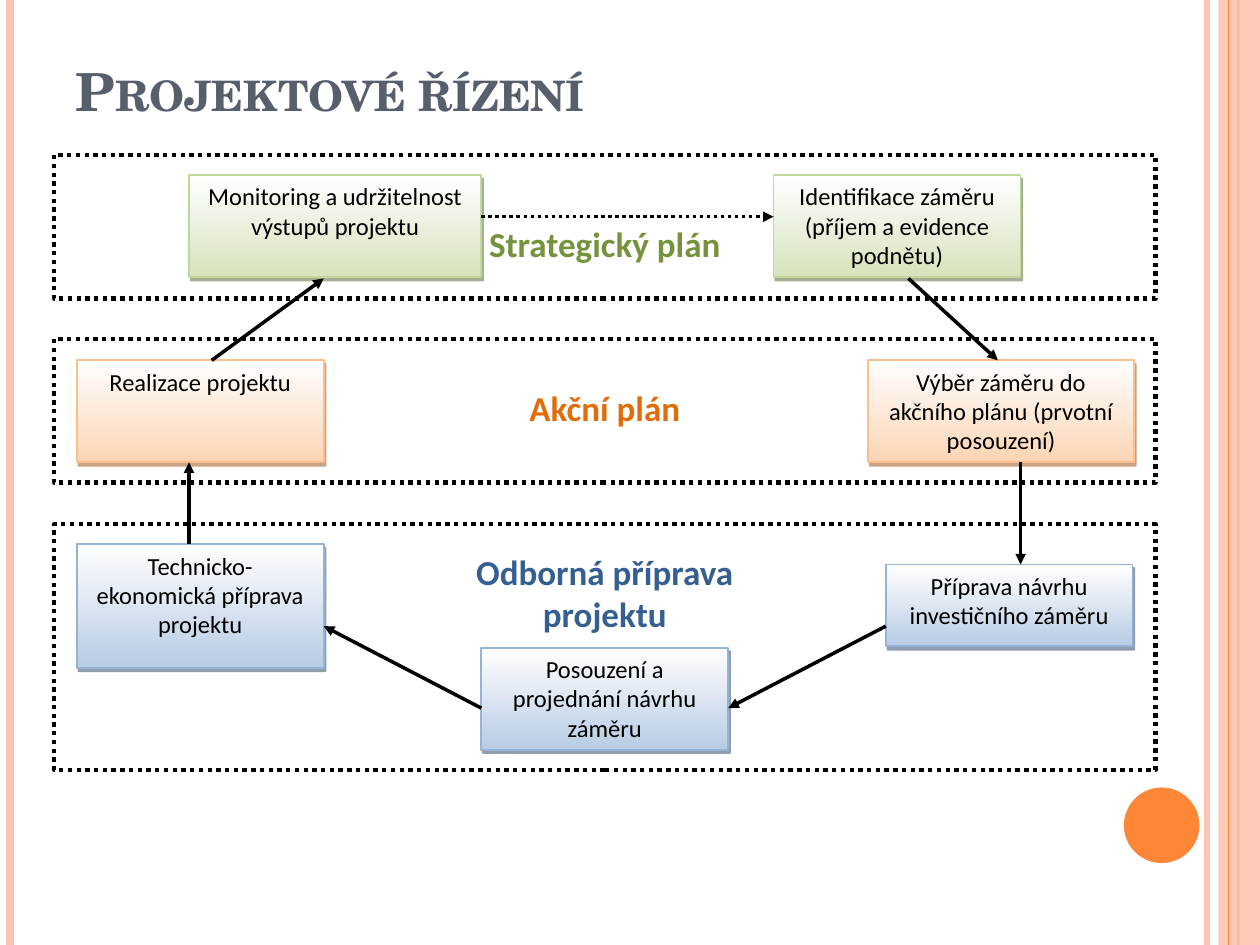
from lxml.etree import SubElement
from pptx import Presentation
from pptx.dml.color import RGBColor
from pptx.enum.dml import MSO_LINE
from pptx.enum.shapes import MSO_CONNECTOR, MSO_SHAPE
from pptx.enum.text import MSO_ANCHOR, PP_ALIGN
from pptx.oxml.ns import qn
from pptx.util import Inches, Pt

THEME = {
    "heading_font": "TeX Gyre Schola", "body_font": "Calibri",
    "title_size": 30, "label_size": 20, "box_size": 14,
    "title": "575F6D", "black": "000000", "white": "FFFFFF",
    "accent": "FE8637", "pale": "FEC3AE",
    "strategic": {"fill": "D6E3BC", "line": "C2D69B", "shadow": "4E6128", "label": "76923C"},
    "action": {"fill": "FBD4B4", "line": "FABF8F", "shadow": "974706", "label": "E36C0A"},
    "expert": {"fill": "B8CCE4", "line": "95B3D7", "shadow": "243F60", "label": "365F91"},
}


def write_text(shape, text, size, color, font=THEME["body_font"], bold=False,
               align=PP_ALIGN.CENTER, anchor=MSO_ANCHOR.TOP, small_caps=False):
    frame = shape.text_frame
    frame.word_wrap = True
    frame.vertical_anchor = anchor
    paragraph = frame.paragraphs[0]
    paragraph.alignment = align
    run = paragraph.add_run()
    run.text = text
    run.font.name = font
    run.font.size = Pt(size)
    run.font.bold = bold
    run.font.color.rgb = RGBColor.from_string(color)
    if small_caps:
        run.font._element.set("cap", "small")


def draw_line(start, end, color, width, dash=None, arrow=False):
    points = [Inches(value) for value in (*start, *end)]
    connector = slide.shapes.add_connector(MSO_CONNECTOR.STRAIGHT, *points)
    connector.line.color.rgb = RGBColor.from_string(color)
    connector.line.width = Pt(width)
    if dash:
        connector.line.dash_style = dash
    if arrow:
        SubElement(connector.line._get_or_add_ln(), qn("a:tailEnd"), type="triangle")
    SubElement(connector._element.spPr, qn("a:effectLst"))


presentation = Presentation()
presentation.slide_width = Inches(10)
presentation.slide_height = Inches(7.5)
slide = presentation.slides.add_slide(presentation.slide_layouts[6])

for x, color, width in [(9.58, "pale", 3), (0.08, "pale", 4.5), (9.83, "accent", 1.5)]:
    draw_line((x, 0), (x, 7.5), THEME[color], width)

side_band = slide.shapes.add_shape(
    MSO_SHAPE.RECTANGLE, Inches(9.67), Inches(0), Inches(0.33), Inches(7.5))
side_band.fill.solid()
side_band.fill.fore_color.rgb = RGBColor.from_string(THEME["pale"])
band_color = side_band._element.spPr.find(qn("a:solidFill")).find(qn("a:srgbClr"))
SubElement(band_color, qn("a:alpha"), val="87000")
side_band.line.fill.background()
side_band.shadow.inherit = False

draw_line((9.75, 0), (9.75, 7.5), THEME["accent"], 0.75)

circle = slide.shapes.add_shape(
    MSO_SHAPE.OVAL, Inches(8.92), Inches(6.25), Inches(0.6), Inches(0.6))
circle.fill.solid()
circle.fill.fore_color.rgb = RGBColor.from_string(THEME["accent"])
circle.line.fill.background()
circle.shadow.inherit = False

title = slide.shapes.add_textbox(Inches(0.5), Inches(0.3), Inches(8.17), Inches(0.72))
write_text(title, "Projektové řízení", THEME["title_size"], THEME["title"],
           font=THEME["heading_font"], bold=True, align=PP_ALIGN.LEFT,
           anchor=MSO_ANCHOR.BOTTOM, small_caps=True)

for top, height in [(1.23, 1.14), (2.69, 1.14), (4.16, 1.95)]:
    frame_box = slide.shapes.add_shape(
        MSO_SHAPE.RECTANGLE, Inches(0.43), Inches(top), Inches(8.74), Inches(height))
    frame_box.fill.solid()
    frame_box.fill.fore_color.rgb = RGBColor.from_string(THEME["white"])
    frame_box.line.color.rgb = RGBColor.from_string(THEME["black"])
    frame_box.line.width = Pt(2.5)
    frame_box.line.dash_style = MSO_LINE.ROUND_DOT
    frame_box.shadow.inherit = False

steps = [
    ("Příprava návrhu investičního záměru", "expert", 7.03, 4.48, 1.96, 0.65),
    ("Identifikace záměru (příjem a evidence podnětu)", "strategic", 6.14, 1.39, 1.96, 0.81),
    ("Výběr záměru do akčního plánu (prvotní posouzení)", "action", 6.89, 2.86, 2.11, 0.81),
    ("Posouzení a projednání návrhu záměru", "expert", 3.82, 5.14, 1.96, 0.81),
    ("Technicko-ekonomická příprava projektu", "expert", 0.61, 4.32, 1.96, 0.98),
    ("Realizace projektu", "action", 0.61, 2.86, 1.96, 0.81),
    ("Monitoring a udržitelnost výstupů projektu", "strategic", 1.5, 1.39, 2.32, 0.81),
]
for text, phase, *bounds in steps:
    colors = THEME[phase]
    step = slide.shapes.add_shape(MSO_SHAPE.RECTANGLE, *[Inches(value) for value in bounds])
    step.fill.gradient()
    step.fill.gradient_angle = 270
    for stop, color in zip(step.fill.gradient_stops, (THEME["white"], colors["fill"])):
        stop.color.rgb = RGBColor.from_string(color)
    step.line.color.rgb = RGBColor.from_string(colors["line"])
    step.line.width = Pt(1)
    step.shadow.inherit = False
    effects = step._element.spPr.find(qn("a:effectLst"))
    shadow = SubElement(effects, qn("a:outerShdw"), blurRad="0", dist=str(Pt(2.2)),
                        dir=str(63 * 60000), algn="ctr", rotWithShape="0")
    shadow_color = SubElement(shadow, qn("a:srgbClr"), val=colors["shadow"])
    SubElement(shadow_color, qn("a:alpha"), val="50000")
    write_text(step, text, THEME["box_size"], THEME["black"])

for text, phase, top, height in [
    ("Strategický plán", "strategic", 1.72, 0.49),
    ("Akční plán", "action", 3.02, 0.65),
    ("Odborná příprava projektu", "expert", 4.32, 0.81),
]:
    label = slide.shapes.add_textbox(Inches(3.64), Inches(top), Inches(2.32), Inches(height))
    write_text(label, text, THEME["label_size"], THEME[phase]["label"], bold=True)

for start, end, dash in [
    ((7.21, 2.21), (7.92, 2.86), None),
    ((1.68, 2.86), (2.57, 2.21), None),
    ((1.5, 4.32), (1.5, 3.67), None),
    ((3.82, 5.62), (2.57, 4.97), None),
    ((7.03, 4.97), (5.78, 5.62), None),
    ((8.1, 3.67), (8.1, 4.48), None),
    ((3.82, 1.72), (6.14, 1.72), MSO_LINE.ROUND_DOT),
]:
    draw_line(start, end, THEME["black"], 2, dash=dash, arrow=True)

presentation.save("out.pptx")
